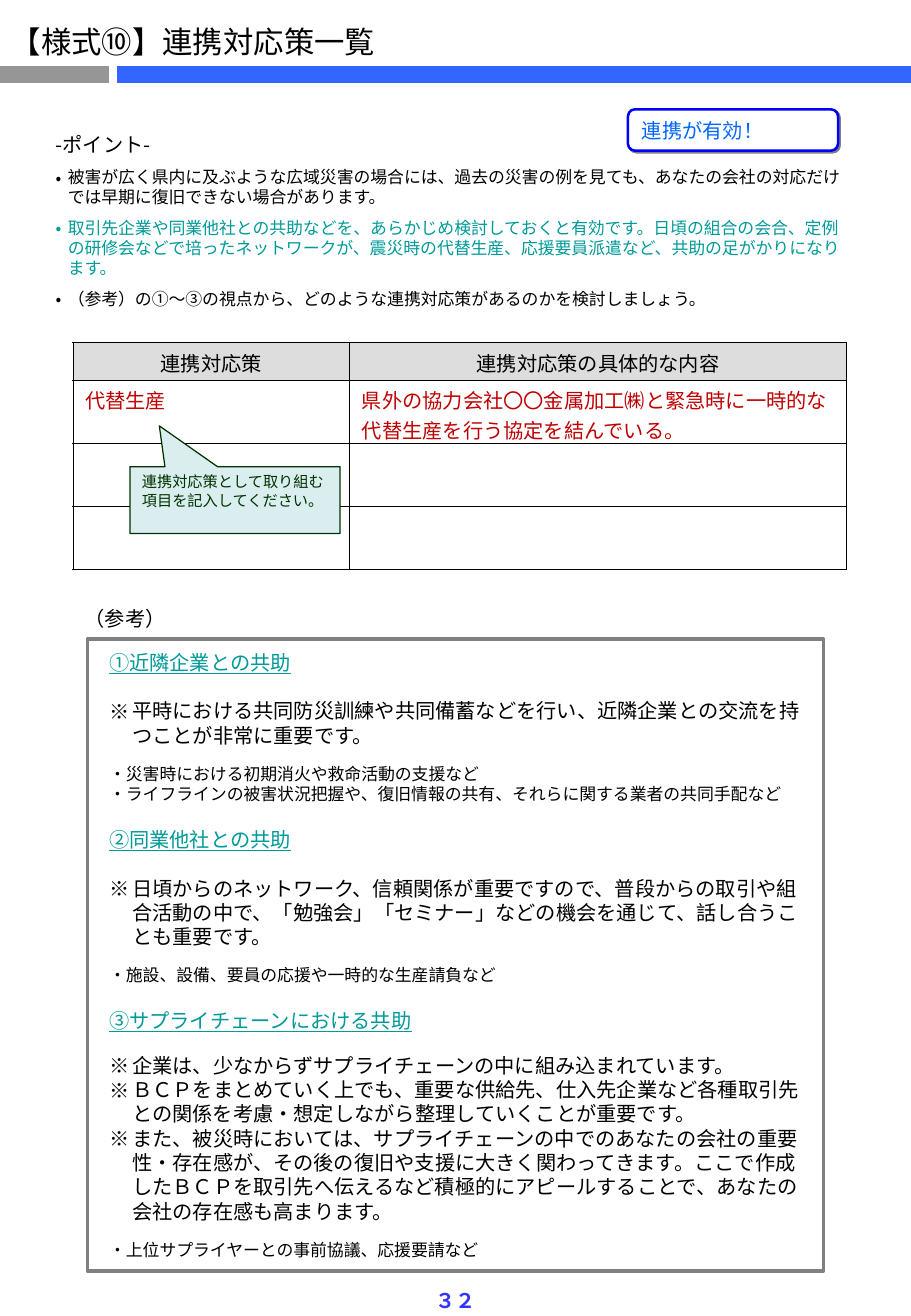
from lxml import etree
from pptx import Presentation
from pptx.dml.color import RGBColor
from pptx.enum.shapes import MSO_CONNECTOR as Conn, MSO_SHAPE as Shp
from pptx.enum.text import MSO_ANCHOR as Anchor, PP_ALIGN as Al
from pptx.oxml.ns import qn
from pptx.util import Inches, Pt

FONT = "Noto Sans CJK JP"
BLACK, TEAL, RED, GREY = "000000", "009999", "C00000", "808080"
CELL = 0.1  # inches per grid column and row
LEADING = 1.2


def rgb(value):
    return RGBColor.from_string(value)


def child(parent, tag, **attrs):
    return etree.SubElement(parent, qn(tag), {k: str(v) for k, v in attrs.items()})


def solid(parent, color):
    child(child(parent, "a:solidFill"), "a:srgbClr", val=color)


def grid(*cells):
    return [Inches(c * CELL) for c in cells]


def para(text, size=12, color=BLACK, bullet=None, hang=0, leading=LEADING,
         align=Al.LEFT, before=0, after=0, **font):
    return dict(text=text, size=size, color=color, bullet=bullet, hang=hang,
                leading=leading, align=align, before=before, after=after, font=font)


class Page:
    """Holds the slide and draws on a grid of 0.1 inch cells."""

    def __init__(self, prs):
        self.s = prs.slides.add_slide(prs.slide_layouts[6])

    def fill_text(self, tf, paras):
        tf.word_wrap = True
        for i, item in enumerate(paras):
            p = tf.paragraphs[0] if i == 0 else tf.add_paragraph()
            layout = {"alignment": item["align"], "space_before": Pt(item["before"]),
                      "space_after": Pt(item["after"])}
            if item["leading"]:
                layout["line_spacing"] = Pt(item["size"] * item["leading"])
            for name, value in layout.items():
                setattr(p, name, value)
            pPr = p._p.get_or_add_pPr()
            if item["hang"]:
                indent = Inches(item["hang"] * CELL)
                pPr.set("marL", str(indent))
                pPr.set("indent", str(-indent))
            if item["bullet"]:
                child(pPr, "a:buFont", typeface=FONT)
                child(pPr, "a:buChar", char=item["bullet"])
            r = p.add_run()
            r.text = item["text"]
            style = {"name": FONT, "size": Pt(item["size"]), **item["font"]}
            for name, value in style.items():
                setattr(r.font, name, value)
            r.font.color.rgb = rgb(item["color"])
            child(r._r.get_or_add_rPr(), "a:ea", typeface=FONT)

    def text(self, box, *paras):
        self.fill_text(self.s.shapes.add_textbox(*grid(*box)).text_frame, paras)

    def shape(self, kind, box, line, width, fill=None, adj=(), paras=(),
              anchor=Anchor.TOP):
        sp = self.s.shapes.add_shape(kind, *grid(*box))
        sp.shadow.inherit = False
        for i, value in enumerate(adj):
            sp.adjustments[i] = value
        if fill:
            sp.fill.solid()
            sp.fill.fore_color.rgb = rgb(fill)
        else:
            sp.fill.background()
        sp.line.color.rgb = rgb(line)
        sp.line.width = Pt(width)
        sp.text_frame.vertical_anchor = anchor
        self.fill_text(sp.text_frame, paras)
        return sp

    def drop_shadow(self, sp, color, distance):
        effects = sp._element.spPr.find(qn("a:effectLst"))
        shadow = child(effects, "a:outerShdw", dist=Pt(distance), dir=45 * 60000,
                       algn="ctr", rotWithShape=0)
        child(shadow, "a:srgbClr", val=color)

    def bar(self, left, right, row, color, width):
        c = self.s.shapes.add_connector(Conn.STRAIGHT, *grid(left, row, right, row))
        c.line.color.rgb = rgb(color)
        c.line.width = Pt(width)
        child(c._element.spPr, "a:effectLst")

    def table(self, left, top, cols, rows, cells, head_fill):
        """cells maps (row, column) to a paragraph; row 0 is the header."""
        box = grid(left, top, sum(cols), sum(rows))
        t = self.s.shapes.add_table(len(rows), len(cols), *box).table
        for lines, name, sizes in ((t.columns, "width", cols), (t.rows, "height", rows)):
            for line, size in zip(lines, grid(*sizes)):
                setattr(line, name, size)
        for y in range(len(rows)):
            for x in range(len(cols)):
                cell = t.cell(y, x)
                cell.margin_top, cell.margin_bottom = grid(0.4, 0)
                for side in ("a:lnL", "a:lnR", "a:lnT", "a:lnB"):
                    solid(child(cell._tc.get_or_add_tcPr(), side, w=Pt(0.5)), BLACK)
                if y == 0:
                    cell.fill.solid()
                    cell.fill.fore_color.rgb = rgb(head_fill)
                else:
                    cell.fill.background()
                if (y, x) in cells:
                    self.fill_text(cell.text_frame, [cells[y, x]])


def point(text, color=BLACK):
    return para(text, 10, color, "•", hang=1, after=6)


def measure(page, top, height, title, notes, examples, gap=14.4):
    """One kind of mutual aid: underlined title, ※ notes, small examples."""
    page.text((8, top, 59, height),
              para(title, color=TEAL, underline=True, hang=1.9),
              *(para(n, bullet="※", hang=1.9, before=0 if i else gap)
                for i, n in enumerate(notes)),
              *(para(e, 10, hang=1.9, before=0 if i else 9.6)
                for i, e in enumerate(examples)))


def main():
    prs = Presentation()
    prs.slide_width, prs.slide_height = grid(75, 108.3)
    page = Page(prs)

    page.bar(0, 9, 6.1, "969696", 10)
    page.bar(9.6, 75, 6.1, "3366FF", 10)
    page.text((-0.1, 1.4, 36, 4), para("【様式⑩】連携対応策一覧", 18))
    page.text(
        (3.6, 10.4, 67.7, 15.7),
        para("-ポイント-", hang=1, after=6),
        point("被害が広く県内に及ぶような広域災害の場合には、過去の災害の例を見ても、"
              "あなたの会社の対応だけでは早期に復旧できない場合があります。"),
        point("取引先企業や同業他社との共助などを、あらかじめ検討しておくと有効です。"
              "日頃の組合の会合、定例の研修会などで培ったネットワークが、"
              "震災時の代替生産、応援要員派遣など、共助の足がかりになります。", TEAL),
        point("（参考）の①～③の視点から、どのような連携対応策があるのかを検討しましょう。"))

    measure(page, 53, 13.8, "①近隣企業との共助",
            ["平時における共同防災訓練や共同備蓄などを行い、"
             "近隣企業との交流を持つことが非常に重要です。"],
            ["・災害時における初期消火や救命活動の支援など",
             "・ライフラインの被害状況把握や、復旧情報の共有、それらに関する業者の共同手配など"])
    measure(page, 67.6, 14.1, "②同業他社との共助",
            ["日頃からのネットワーク、信頼関係が重要ですので、普段からの取引や組合活動の中で、"
             "「勉強会」「セミナー」などの機会を通じて、話し合うことも重要です。"],
            ["・施設、設備、要員の応援や一時的な生産請負など"])
    measure(page, 82.5, 21.9, "③サプライチェーンにおける共助",
            ["企業は、少なからずサプライチェーンの中に組み込まれています。",
             "ＢＣＰをまとめていく上でも、重要な供給先、仕入先企業など各種取引先との関係を"
             "考慮・想定しながら整理していくことが重要です。",
             "また、被災時においては、サプライチェーンの中でのあなたの会社の重要性・存在感が、"
             "その後の復旧や支援に大きく関わってきます。ここで作成したＢＣＰを取引先へ伝えるなど"
             "積極的にアピールすることで、あなたの会社の存在感も高まります。"],
            ["・上位サプライヤーとの事前協議、応援要請など"], gap=12)

    page.table(6, 28.2, (22.8, 40.9), (3.1, 5.2, 5.2, 5.2), {
        (0, 0): para("連携対応策", align=Al.CENTER, leading=None),
        (0, 1): para("連携対応策の具体的な内容", align=Al.CENTER, leading=None),
        (1, 0): para("代替生産", color=RED, leading=None),
        (1, 1): para("県外の協力会社〇〇金属加工㈱と緊急時に一時的な"
                     "代替生産を行う協定を結んでいる。", color=RED, leading=None),
    }, head_fill="DDDDDD")

    page.text((32.5, 105.5, 10, 3.1),
              para("３２", color="3333FF", bold=True, align=Al.CENTER))
    badge = page.shape(Shp.ROUNDED_RECTANGLE, (51.7, 9, 17.3, 3.4), "0000FF", 1.5,
                       "FFFFFF", [0.17], [para("連携が有効！", color="0066FF")],
                       Anchor.MIDDLE)
    page.drop_shadow(badge, GREY, 1.4)
    page.text((6, 49.4, 12, 3.1), para("（参考）"))
    page.shape(Shp.RECTANGLE, (7.2, 52.6, 60.6, 52), GREY, 2.25)
    page.shape(Shp.RECTANGULAR_CALLOUT, (10.7, 38.4, 17.3, 5.5), "003300", 0.75,
               "DAEDEF", [-0.36, -1.11],
               [para("連携対応策として取り組む項目を記入してください。", 9, "003300")])

    prs.save("out.pptx")


if __name__ == "__main__":
    main()
